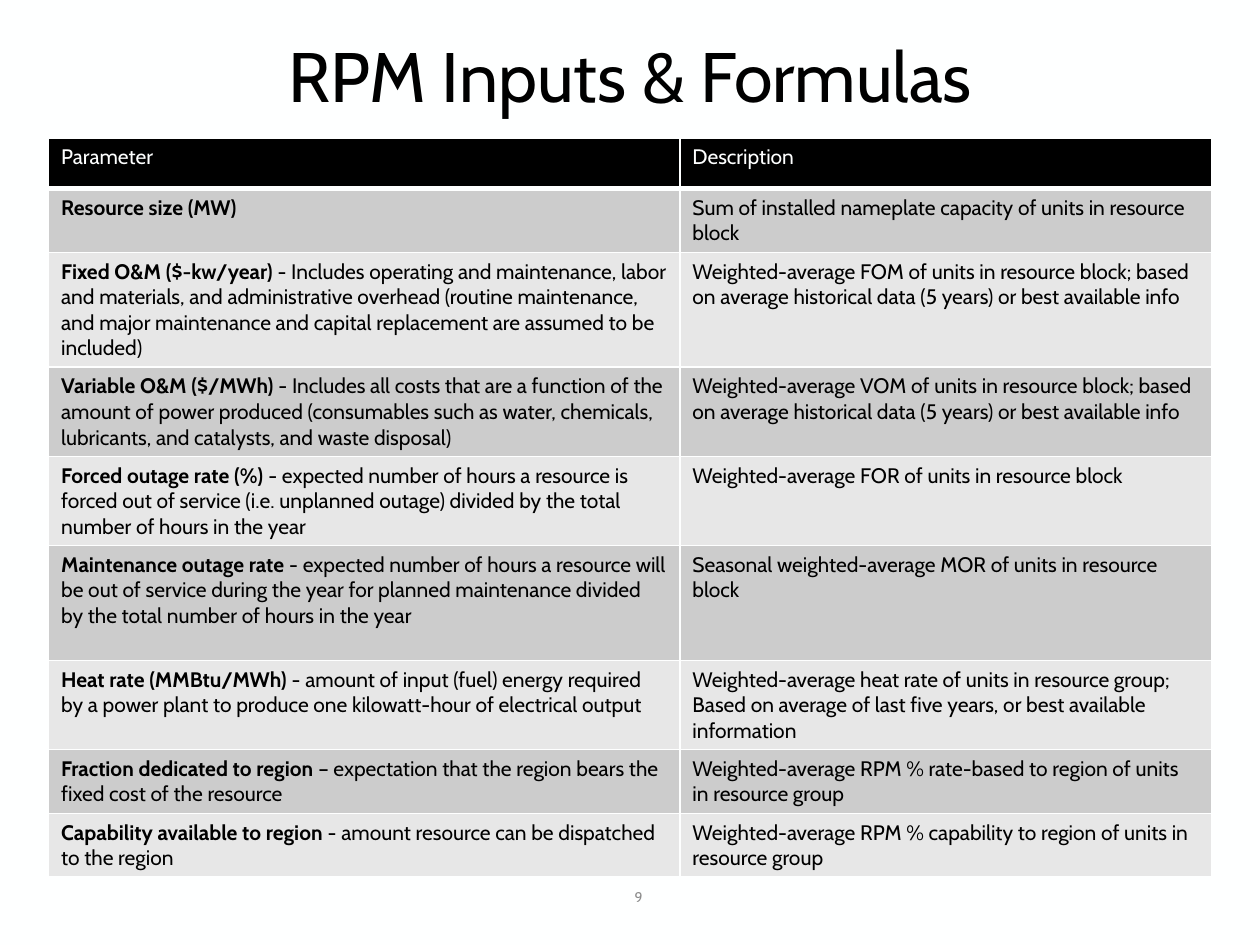
import pptx
import pptx.util
from lxml import etree
from pptx.dml.color import RGBColor
from pptx.enum.text import MSO_ANCHOR, PP_ALIGN
from pptx.oxml.ns import qn

Pt = pptx.util.Pt

# Content
TITLE = "RPM Inputs & Formulas"
PAGE_NUMBER = "9"
HEADERS = ("Parameter", "Description")
# Parameter name, explanation, description, height in text lines
PARAMETERS = [
    ("Resource size (MW)", "",
     "Sum of installed nameplate capacity of units in resource block", 2),
    ("Fixed O&M ($-kw/year) ",
     "- Includes operating and maintenance, labor and materials, and administrative overhead "
     "(routine maintenance, and major maintenance and capital replacement are assumed to be included)",
     "Weighted-average FOM of units in resource block; based on average historical data "
     "(5 years) or best available info", 4),
    ("Variable O&M ($/MWh) ",
     "- Includes all costs that are a function of the amount of power produced (consumables "
     "such as water, chemicals, lubricants, and catalysts, and waste disposal)",
     "Weighted-average VOM of units in resource block; based on average historical data "
     "(5 years) or best available info", 3),
    ("Forced outage rate (%) ",
     "- expected number of hours a resource is forced out of service (i.e. unplanned outage) "
     "divided by the total number of hours in the year",
     "Weighted-average FOR of units in resource block", 3),
    ("Maintenance outage rate ",
     "- expected number of hours a resource will be out of service during the year for planned "
     "maintenance divided by the total number of hours in the year",
     "Seasonal weighted-average MOR of units in resource block", 4),
    ("Heat rate (MMBtu/MWh) ",
     "- amount of input (fuel) energy required by a power plant to produce one kilowatt-hour "
     "of electrical output",
     "Weighted-average heat rate of units in resource group; Based on average of last five "
     "years, or best available information", 3),
    ("Fraction dedicated to region ",
     "– expectation that the region bears the fixed cost of the resource",
     "Weighted-average RPM % rate-based to region of units in resource group", 2),
    ("Capability available to region ",
     "- amount resource can be dispatched to the region",
     "Weighted-average RPM % capability to region of units in resource group", 2),
]

# Style
FONT = "Cabin"
BLACK, WHITE, GRAY = "000000", "FEFFFF", "8C8C8C"
BANDS = ("CCCCCC", "E7E7E7")
COLUMN_WIDTHS = (360.75, 303.75)
HEADER_HEIGHT, LINE_HEIGHT, CELL_PADDING = 28.8, 14.6, 7.2


def color(hex_value):
    return RGBColor.from_string(hex_value)


def format_font(font, size, hex_value, bold=False):
    font.name, font.size, font.bold = FONT, Pt(size), bold
    font.color.rgb = color(hex_value)


def set_text_box(shape, text, size, hex_value):
    frame = shape.text_frame
    frame.word_wrap = True
    frame.vertical_anchor = MSO_ANCHOR.MIDDLE
    frame.text = text
    paragraph = frame.paragraphs[0]
    paragraph.alignment = PP_ALIGN.CENTER
    format_font(paragraph.runs[0].font, size, hex_value)
    return paragraph


def set_borders(cell, bottom_width, top_width):
    properties = cell._tc.get_or_add_tcPr()
    widths = {"a:lnL": 1, "a:lnR": 1, "a:lnT": top_width, "a:lnB": bottom_width}
    for index, (tag, width) in enumerate(widths.items()):
        line = etree.Element(qn(tag), w=str(Pt(width)))
        fill = etree.SubElement(line, qn("a:solidFill"))
        etree.SubElement(fill, qn("a:srgbClr"), val=WHITE)
        properties.insert(index, line)


def fill_cell(cell, parts, text_color, fill_color, bottom_width=1, top_width=1):
    paragraph = cell.text_frame.paragraphs[0]
    for text, bold in parts:
        if text:
            run = paragraph.add_run()
            run.text = text
            format_font(run.font, 12, text_color, bold)
    cell.fill.solid()
    cell.fill.fore_color.rgb = color(fill_color)
    set_borders(cell, bottom_width, top_width)


# Slide
presentation = pptx.Presentation()
presentation.slide_width, presentation.slide_height = Pt(720), Pt(540)
slide = presentation.slides.add_slide(presentation.slide_layouts[5])
slide.background.fill.solid()
slide.background.fill.fore_color.rgb = color(WHITE)

# Title
title = slide.shapes.title
title.left, title.top, title.width, title.height = Pt(49.5), Pt(13), Pt(621), Pt(65.5)
set_text_box(title, TITLE, 40, BLACK).line_spacing = 0.9

# Page number
page_box = slide.shapes.add_textbox(Pt(344), Pt(498), Pt(42), Pt(29))
set_text_box(page_box, PAGE_NUMBER, 8, GRAY)

# Table
heights = [HEADER_HEIGHT] + [lines * LINE_HEIGHT + CELL_PADDING for *_, lines in PARAMETERS]
table = slide.shapes.add_table(
    len(heights), len(HEADERS), Pt(27.75), Pt(79),
    Pt(sum(COLUMN_WIDTHS)), Pt(sum(heights))).table
for column, width in zip(table.columns, COLUMN_WIDTHS):
    column.width = Pt(width)
for row, height in zip(table.rows, heights):
    row.height = Pt(height)

for column, header in enumerate(HEADERS):
    fill_cell(table.cell(0, column), [(header, False)], WHITE, BLACK, bottom_width=3)
for row, (name, explanation, description, _) in enumerate(PARAMETERS, start=1):
    band = BANDS[(row - 1) % 2]
    top_width = 3 if row == 1 else 1
    fill_cell(table.cell(row, 0), [(name, True), (explanation, False)], BLACK, band,
              top_width=top_width)
    fill_cell(table.cell(row, 1), [(description, False)], BLACK, band, top_width=top_width)

presentation.save("out.pptx")
